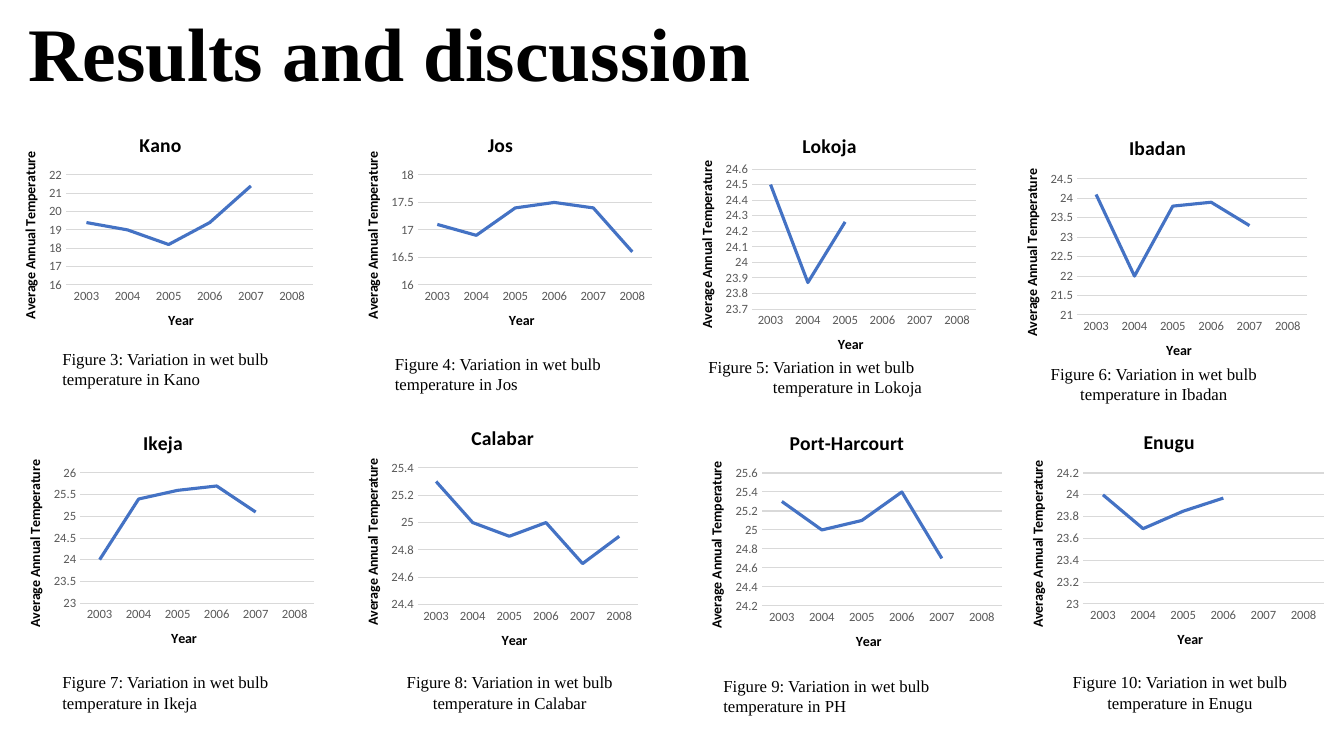
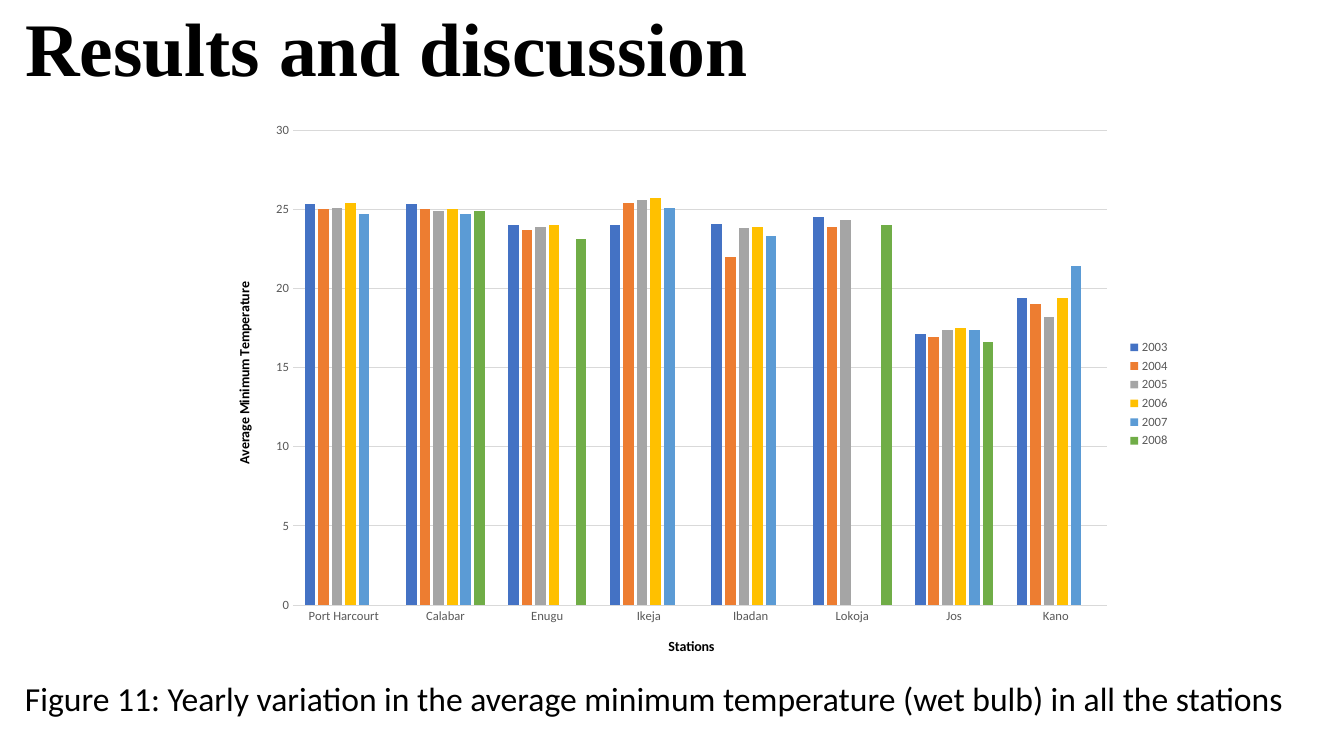
import pptx
import pptx.chart.data
import pptx.dml.color
import pptx.enum.chart
import pptx.enum.text
import pptx.oxml
import pptx.util

Cm, Pt = pptx.util.Cm, pptx.util.Pt
CHART = pptx.enum.chart
ALIGN = pptx.enum.text.PP_ALIGN
ANCHOR = pptx.enum.text.MSO_ANCHOR

BLACK, GREY, PALE = "000000", "595959", "D9D9D9"
SERIF, SANS = "Times New Roman", "Calibri"
COLORS = ["4472C4", "ED7D31", "A5A5A5", "FFC000", "5B9BD5", "70AD47"]
TITLE = "Results and discussion"
YEARS = ["2003", "2004", "2005", "2006", "2007", "2008"]
CAPTION_SIZE = (6.6, 1.27)

# name, place in caption, values, scale (min, max, step), chart box, plot box,
# caption corner, caption alignment, hanging indent; boxes in cm
STATIONS = [
    ("Kano", "Kano", [19.4, 19, 18.2, 19.4, 21.4, None], (16, 22, 1),
     (0.03, 2.97, 8.03, 5.84), (1.66, 4.41, 6.22, 2.77), (1.32, 8.66), ALIGN.LEFT, 0),
    ("Jos", "Jos", [17.1, 16.9, 17.4, 17.5, 17.4, 16.6], (16, 18, 0.5),
     (8.64, 2.97, 7.95, 5.84), (10.53, 4.41, 5.9, 2.77), (9.7, 8.79), ALIGN.LEFT, 0),
    ("Lokoja", "Lokoja", [24.5, 23.87, 24.26, None, None, 23.97], (23.7, 24.6, 0.1),
     (17.07, 2.97, 7.67, 6.45), (18.95, 4.26, 5.64, 3.53), (17.6, 8.86), ALIGN.LEFT, 1.63),
    ("Ibadan", "Ibadan", [24.1, 22, 23.8, 23.9, 23.3, None], (21, 24.5, 0.5),
     (25.25, 3.02, 7.85, 6.55), (27.14, 4.51, 5.8, 3.43), (25.78, 9.04), ALIGN.CENTER, 0),
    ("Ikeja", "Ikeja", [24, 25.4, 25.6, 25.7, 25.1, None], (23, 26, 0.5),
     (0.15, 10.46, 7.92, 6.38), (2.02, 11.92, 5.9, 3.28), (1.32, 16.81), ALIGN.LEFT, 0),
    ("Calabar", "Calabar", [25.3, 25, 24.9, 25, 24.7, 24.9], (24.4, 25.4, 0.2),
     (8.76, 10.34, 7.82, 6.6), (10.53, 11.79, 5.54, 3.45), (9.55, 16.81), ALIGN.CENTER, 0),
    ("Port-Harcourt", "PH", [25.3, 25, 25.1, 25.4, 24.7, None], (24.2, 25.6, 0.2),
     (17.27, 10.46, 8.15, 6.45), (19.2, 11.92, 6.05, 3.35), (17.98, 16.89), ALIGN.LEFT, 0),
    ("Enugu", "Enugu", [24, 23.69, 23.85, 23.97, None, 23.11], (23, 24.2, 0.2),
     (25.4, 10.44, 8.13, 6.4), (27.29, 11.92, 6.07, 3.3), (26.44, 16.81), ALIGN.CENTER, 0),
]

ALL_STATIONS = ["Port Harcourt", "Calabar", "Enugu", "Ikeja", "Ibadan", "Lokoja", "Jos", "Kano"]
YEARLY = [
    [25.3, 25.3, 24, 24, 24.1, 24.5, 17.1, 19.4],
    [25, 25, 23.7, 25.4, 22, 23.9, 16.9, 19],
    [25.1, 24.9, 23.9, 25.6, 23.8, 24.3, 17.4, 18.2],
    [25.4, 25, 24, 25.7, 23.9, None, 17.5, 19.4],
    [24.7, 24.7, None, 25.1, 23.3, None, 17.4, 21.4],
    [None, 24.9, 23.1, None, None, 24, 16.6, None],
]
YEARLY_CAPTION = ("Figure 11: Yearly variation in the average minimum temperature "
                  "(wet bulb) in all the stations")


def rgb(color):
    return pptx.dml.color.RGBColor.from_string(color)


def style(font, size, color=BLACK, name=SANS, bold=False):
    font.size, font.name, font.bold = Pt(size), name, bold
    font.color.rgb = rgb(color)


def add_slide(prs, title_box):
    s = prs.slides.add_slide(prs.slide_layouts[5])
    sp = s.shapes.title
    sp.left, sp.top, sp.width, sp.height = map(Cm, title_box)
    tf = sp.text_frame
    tf.text = TITLE
    tf.vertical_anchor = ANCHOR.BOTTOM
    tf.auto_size = pptx.enum.text.MSO_AUTO_SIZE.NONE
    p = tf.paragraphs[0]
    p.alignment, p.line_spacing = ALIGN.LEFT, 0.9
    style(p.runs[0].font, 54, name=SERIF, bold=True)
    return s


def add_caption(s, text, box, size, name, align=ALIGN.LEFT, hanging=0):
    tf = s.shapes.add_textbox(*map(Cm, box)).text_frame
    tf.word_wrap = True
    tf.vertical_anchor = ANCHOR.MIDDLE
    tf.text = text
    p = tf.paragraphs[0]
    p.alignment = align
    if hanging:
        pPr = p._p.get_or_add_pPr()
        pPr.set("marL", str(Cm(hanging)))
        pPr.set("indent", str(-Cm(hanging)))
    style(p.runs[0].font, size, name=name)


def set_title(owner, text, size):
    """Title a chart or an axis."""
    owner.has_title = True
    title = owner.chart_title if hasattr(owner, "chart_title") else owner.axis_title
    title.text_frame.text = text
    style(title.text_frame.paragraphs[0].runs[0].font, size, bold=True)
    return title


def place_plot(chart, box, plot):
    """Fix the inner plot area, given in slide coordinates."""
    fractions = {
        "x": (plot[0] - box[0]) / box[2], "y": (plot[1] - box[1]) / box[3],
        "w": plot[2] / box[2], "h": plot[3] / box[3],
    }
    parts = "".join(f'<c:{k} val="{v:.4f}"/>' for k, v in fractions.items())
    area = chart._chartSpace.xpath("c:chart/c:plotArea")[0]
    for old in area.xpath("c:layout"):
        area.remove(old)
    area.insert(0, pptx.oxml.parse_xml(
        '<c:layout xmlns:c="http://schemas.openxmlformats.org/drawingml/2006/chart">'
        '<c:manualLayout><c:layoutTarget val="inner"/>'
        f'<c:xMode val="edge"/><c:yMode val="edge"/>{parts}</c:manualLayout></c:layout>'))


def add_chart(s, kind, cats, series, box, plot, axis_titles, scale):
    data = pptx.chart.data.CategoryChartData()
    data.categories = cats
    for name, values in series:
        data.add_series(name, values)
    chart = s.shapes.add_chart(kind, *map(Cm, box), data).chart
    chart.has_title = chart.has_legend = False
    style(chart.font, 10)
    for axis, text in zip((chart.category_axis, chart.value_axis), axis_titles):
        set_title(axis, text, 10)
        axis.major_tick_mark = axis.minor_tick_mark = CHART.XL_TICK_MARK.NONE
        style(axis.tick_labels.font, 9, GREY)
    cat, val = chart.category_axis, chart.value_axis
    val.axis_title._element.xpath(".//a:bodyPr")[0].set("rot", "-5400000")
    val.minimum_scale, val.maximum_scale, val.major_unit = scale
    val.has_major_gridlines = True
    val.format.line.fill.background()
    for line in (cat.format.line, val.major_gridlines.format.line):
        line.color.rgb = rgb(PALE)
        line.width = Pt(0.75)
    chart.plots[0].vary_by_categories = False
    place_plot(chart, box, plot)
    return chart


def build_station_slide(prs):
    s = add_slide(prs, (0.46, 0.28, 33.02, 2.31))
    for i, station in enumerate(STATIONS):
        name, place, values, scale, box, plot, corner, align, hanging = station
        chart = add_chart(s, CHART.XL_CHART_TYPE.LINE, YEARS, [(name, values)], box, plot,
                          ("Year", "Average Annual Temperature"), scale)
        set_title(chart, name, 14)
        line = chart.plots[0].series[0]
        line.smooth = False
        line.marker.style = CHART.XL_MARKER_STYLE.NONE
        line.format.line.color.rgb = rgb(COLORS[0])
        line.format.line.width = Pt(2.25)
        add_caption(s, f"Figure {i + 3}: Variation in wet bulb temperature in {place}",
                    corner + CAPTION_SIZE, 12, SERIF, align, hanging)


def build_yearly_slide(prs):
    s = add_slide(prs, (0.38, 0.36, 32.82, 2.11))
    add_caption(s, YEARLY_CAPTION, (0.38, 16.9, 32.82, 1.4), 24, SANS)
    chart = add_chart(s, CHART.XL_CHART_TYPE.COLUMN_CLUSTERED, ALL_STATIONS,
                      zip(YEARS, YEARLY), (5.41, 2.82, 24.33, 14.22),
                      (7.38, 3.28, 20.51, 11.97),
                      ("Stations", "Average Minimum Temperature"), (0, 30, 5))
    bars = chart.plots[0]
    bars.gap_width, bars.overlap = 219, -27
    for series, color in zip(bars.series, COLORS):
        series.format.fill.solid()
        series.format.fill.fore_color.rgb = rgb(color)
    chart.has_legend = True
    chart.legend.position = CHART.XL_LEGEND_POSITION.RIGHT
    chart.legend.include_in_layout = False
    style(chart.legend.font, 9, GREY)


def main():
    prs = pptx.Presentation()
    prs.slide_width, prs.slide_height = Cm(33.87), Cm(19.05)
    build_station_slide(prs)
    build_yearly_slide(prs)
    prs.save("out.pptx")


if __name__ == "__main__":
    main()
